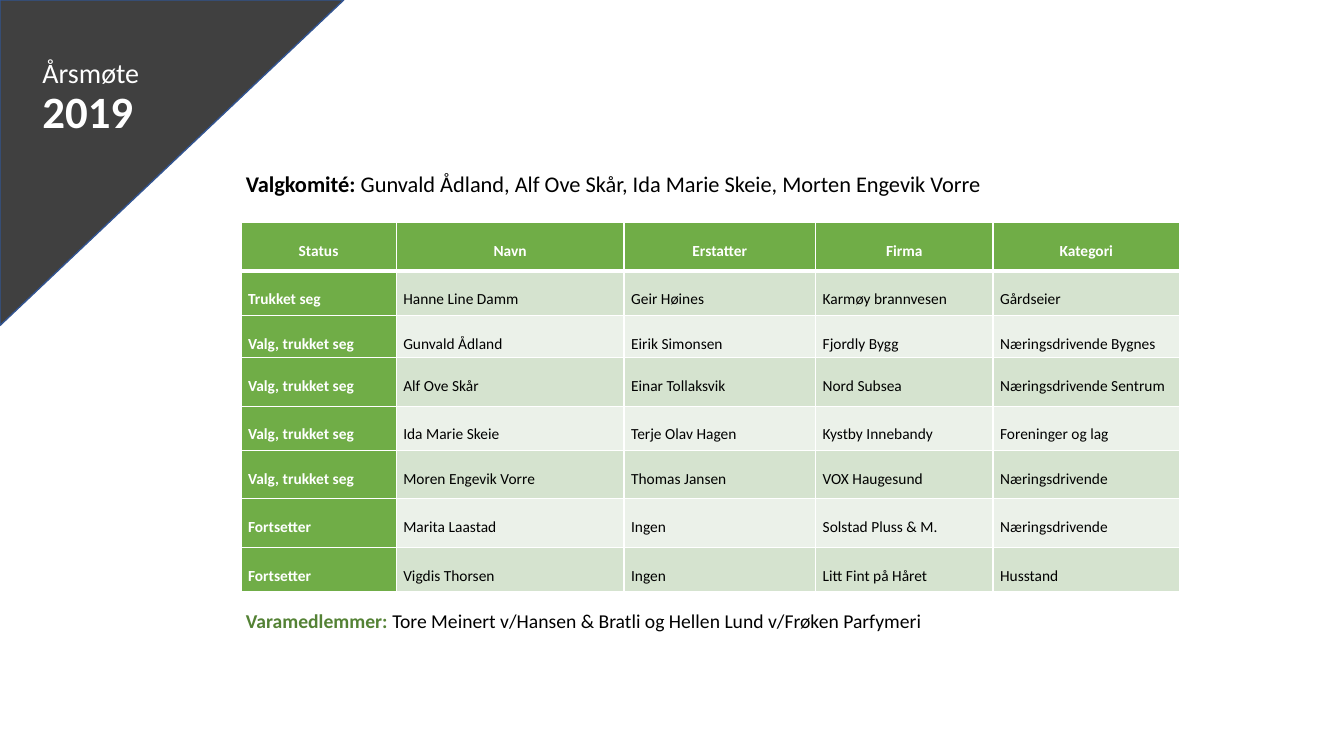
from lxml.etree import SubElement
from pptx import Presentation
from pptx.dml.color import RGBColor
from pptx.enum.shapes import MSO_SHAPE
from pptx.enum.text import MSO_ANCHOR, MSO_AUTO_SIZE, PP_ALIGN
from pptx.oxml.ns import qn
from pptx.util import Inches, Pt

# Content
TITLE_LINES = [("Årsmøte ", 20, False), ("2019", 32, True)]
COMMITTEE = ("Valgkomité: ", "Gunvald Ådland, Alf Ove Skår, Ida Marie Skeie, Morten Engevik Vorre")
DEPUTIES = ("Varamedlemmer: ", "Tore Meinert v/Hansen & Bratli og Hellen Lund v/Frøken Parfymeri")
ROWS = [
    ("Status", "Navn", "Erstatter", "Firma", "Kategori"),
    ("Trukket seg", "Hanne Line Damm", "Geir Høines", "Karmøy brannvesen", "Gårdseier"),
    ("Valg, trukket seg", "Gunvald Ådland", "Eirik Simonsen", "Fjordly Bygg", "Næringsdrivende Bygnes"),
    ("Valg, trukket seg", "Alf Ove Skår", "Einar Tollaksvik", "Nord Subsea", "Næringsdrivende Sentrum"),
    ("Valg, trukket seg", "Ida Marie Skeie", "Terje Olav Hagen", "Kystby Innebandy", "Foreninger og lag"),
    ("Valg, trukket seg", "Moren Engevik Vorre", "Thomas Jansen", "VOX Haugesund", "Næringsdrivende"),
    ("Fortsetter", "Marita Laastad", "Ingen", "Solstad Pluss & M.", "Næringsdrivende"),
    ("Fortsetter", "Vigdis Thorsen", "Ingen", "Litt Fint på Håret", "Husstand"),
]
COLUMN_WIDTHS = [1.54, 2.26, 1.9, 1.76, 1.85]
ROW_HEIGHTS = [0.48, 0.44, 0.42, 0.48, 0.44, 0.48, 0.48, 0.44]

COLORS = {
    "corner": "404040", "corner line": "325491", "white": "FFFFFF", "black": "000000",
    "green": "70AD47", "dark green": "548235", "odd row": "D5E3CF", "even row": "EBF1E9",
}


def color(name):
    return RGBColor.from_string(COLORS[name])


def add_text(paragraph, text, size, color_name="black", bold=False):
    run = paragraph.add_run()
    run.text = text
    run.font.name = "Calibri"
    run.font.size = Pt(size)
    run.font.bold = bold
    run.font.color.rgb = color(color_name)


def add_labelled_line(slide, box, texts, size, label_color, wrap):
    shape = slide.shapes.add_textbox(*map(Inches, box))
    shape.text_frame.word_wrap = wrap
    label, names = texts
    paragraph = shape.text_frame.paragraphs[0]
    add_text(paragraph, label, size, color_name=label_color, bold=True)
    add_text(paragraph, names, size)


def add_borders(cell_properties, bottom_width):
    widths = {"a:lnL": 1, "a:lnR": 1, "a:lnT": 1, "a:lnB": bottom_width}
    for position, (tag, width) in enumerate(widths.items()):
        line = SubElement(cell_properties, qn(tag), w=str(Pt(width)))
        fill = SubElement(line, qn("a:solidFill"))
        SubElement(fill, qn("a:srgbClr"), val=COLORS["white"])
        cell_properties.insert(position, line)  # borders come before the fill


def add_member_table(slide):
    frame = slide.shapes.add_table(
        len(ROWS), len(COLUMN_WIDTHS), Inches(2.39), Inches(2.21),
        Inches(sum(COLUMN_WIDTHS)), Inches(sum(ROW_HEIGHTS)))
    table = frame.table
    for column, width in zip(table.columns, COLUMN_WIDTHS):
        column.width = Inches(width)
    for row, height in zip(table.rows, ROW_HEIGHTS):
        row.height = Inches(height)

    for row_index, row in enumerate(ROWS):
        for column_index, text in enumerate(row):
            cell = table.cell(row_index, column_index)
            is_header = row_index == 0
            is_label = is_header or column_index == 0
            band = "odd row" if row_index % 2 else "even row"
            cell.margin_left = cell.margin_right = Inches(0.07)
            cell.margin_top = cell.margin_bottom = 0
            cell.fill.solid()
            cell.fill.fore_color.rgb = color("green" if is_label else band)
            paragraph = cell.text_frame.paragraphs[0]
            paragraph.line_spacing = 2.0
            paragraph.alignment = PP_ALIGN.CENTER if is_header else PP_ALIGN.LEFT
            add_text(paragraph, text, 11, color_name="white" if is_label else "black", bold=is_label)

    # White cell borders, thicker below the header
    for index, properties in enumerate(list(frame.element.iter(qn("a:tcPr")))):
        add_borders(properties, 3 if index < len(COLUMN_WIDTHS) else 1)


def add_title(slide):
    title = slide.shapes.title
    title.left, title.top, title.width, title.height = map(Inches, (0.32, -0.01, 5.08, 1.43))
    text_frame = title.text_frame
    text_frame.auto_size = MSO_AUTO_SIZE.NONE
    text_frame.word_wrap = True
    text_frame.vertical_anchor = MSO_ANCHOR.BOTTOM
    paragraph = text_frame.paragraphs[0]
    paragraph.alignment = PP_ALIGN.LEFT
    paragraph.line_spacing = 0.9
    for index, (text, size, bold) in enumerate(TITLE_LINES):
        if index:
            paragraph.add_line_break()
        add_text(paragraph, text, size, color_name="white", bold=bold)
    # The line break takes the size of the first line
    for line_break in list(title.element.iter(qn("a:br"))):
        SubElement(line_break, qn("a:rPr"), sz=str(TITLE_LINES[0][1] * 100))
    return title


def add_corner(slide, title):
    corner = slide.shapes.add_shape(MSO_SHAPE.RIGHT_TRIANGLE, 0, 0, Inches(3.41), Inches(3.23))
    corner.shadow.inherit = False
    corner.fill.solid()
    corner.fill.fore_color.rgb = color("corner")
    corner.line.color.rgb = color("corner line")
    corner.line.width = Pt(1)
    next(corner.element.iter(qn("a:xfrm"))).set("flipV", "1")
    title.element.addprevious(corner.element)  # behind the title


def main():
    presentation = Presentation()
    presentation.slide_width = Inches(13.33)
    presentation.slide_height = Inches(7.5)
    slide = presentation.slides.add_slide(presentation.slide_layouts[5])

    title = add_title(slide)
    add_corner(slide, title)
    add_member_table(slide)
    add_labelled_line(slide, (2.34, 1.64, 7.58, 0.64), COMMITTEE, 16, "black", wrap=False)
    add_labelled_line(slide, (2.34, 5.99, 9.97, 0.34), DEPUTIES, 14, "dark green", wrap=True)
    presentation.save("out.pptx")


if __name__ == "__main__":
    main()
